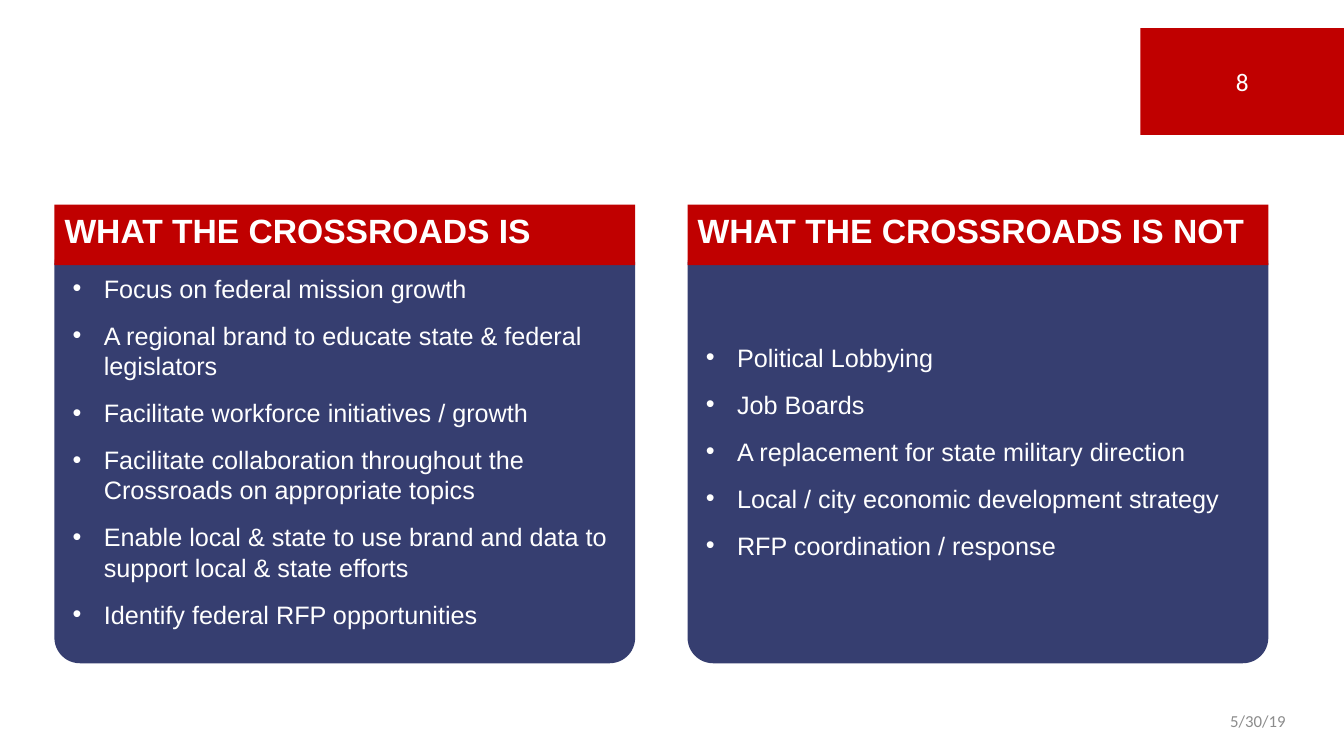
import pptx
import pptx.util
import pptx.dml.color
import pptx.enum.shapes
import pptx.enum.text
import pptx.oxml
import pptx.oxml.ns

Inches = pptx.util.Inches
RGBColor = pptx.dml.color.RGBColor
ALIGN = pptx.enum.text.PP_ALIGN
ANCHOR = pptx.enum.text.MSO_ANCHOR
SHAPE = pptx.enum.shapes.MSO_SHAPE

RED = RGBColor(0xC0, 0x00, 0x00)
NAVY = RGBColor(0x21, 0x2A, 0x61)
WHITE = RGBColor(0xFF, 0xFF, 0xFF)
GRAY = RGBColor(0x8C, 0x8C, 0x8C)

CARD_TOP, CARD_WIDTH, CARD_HEIGHT = 2.03, 5.76, 4.55
HEADING_HEIGHT, PANEL_OFFSET = 0.6, 0.34
LIST_MARGIN = 0.18

CARDS = [
    (0.54, "WHAT THE CROSSROADS IS", [
        "Focus on federal mission growth",
        "A regional brand to educate state & federal legislators",
        "Facilitate workforce initiatives / growth",
        "Facilitate collaboration throughout the Crossroads on appropriate topics",
        "Enable local & state to use brand and data to support local & state efforts",
        "Identify federal RFP opportunities",
    ]),
    (6.82, "WHAT THE CROSSROADS IS NOT", [
        "Political Lobbying",
        "Job Boards",
        "A replacement for state military direction",
        "Local / city economic development strategy",
        "RFP coordination / response",
    ]),
]


def place(box, left, top, width, height):
    """Move and size a box, in inches."""
    box.left, box.top = Inches(left), Inches(top)
    box.width, box.height = Inches(width), Inches(height)


def add_bullet(para):
    """Give a paragraph a round bullet and a hanging indent."""
    properties = para._p.get_or_add_pPr()
    properties.set("marL", str(Inches(0.31)))
    properties.set("indent", str(-Inches(0.31)))
    bullet = pptx.oxml.parse_xml(
        f'<a:buChar {pptx.oxml.ns.nsdecls("a")} char="•"/>')
    properties.append(bullet)


def write_text(box, lines, size, font="Arial", color=WHITE, bold=False,
               align=ALIGN.LEFT, anchor=ANCHOR.MIDDLE, bullets=False, after=0):
    """Fill a box with one formatted paragraph per line."""
    frame = box.text_frame
    frame.word_wrap = True
    frame.auto_size = pptx.enum.text.MSO_AUTO_SIZE.NONE
    frame.vertical_anchor = anchor
    for index, line in enumerate(lines):
        para = frame.add_paragraph() if index else frame.paragraphs[0]
        if bullets:
            add_bullet(para)
        para.alignment = align
        para.space_before = pptx.util.Pt(0)
        para.space_after = pptx.util.Pt(after)
        span = para.add_run()
        span.text = line
        span.font.name = font
        span.font.size = pptx.util.Pt(size)
        span.font.bold = bold
        span.font.color.rgb = color


def add_block(page, kind, color, left, top, width, height):
    """Add a filled shape without outline or shadow."""
    block = page.shapes.add_shape(kind, Inches(left), Inches(top),
                                  Inches(width), Inches(height))
    block.shadow.inherit = False
    block.fill.solid()
    block.fill.fore_color.rgb = color
    block.line.fill.background()
    return block


def add_card(page, heading, listing, title, items, left, top, width, height):
    """Build a red heading over a rounded panel with a bulleted list."""
    panel_box = (left, top + PANEL_OFFSET, width, height - PANEL_OFFSET)
    panel = add_block(page, SHAPE.ROUNDED_RECTANGLE, NAVY, *panel_box)
    panel.adjustments[0] = 0.06
    color = panel.fill._xPr.find(".//" + pptx.oxml.ns.qn("a:srgbClr"))
    color.append(pptx.oxml.parse_xml(
        f'<a:alpha {pptx.oxml.ns.nsdecls("a")} val="90000"/>'))
    heading.element.addprevious(panel.element)

    place(heading, left, top, width, HEADING_HEIGHT)
    heading.fill.solid()
    heading.fill.fore_color.rgb = RED
    write_text(heading, [title], 24, bold=True, anchor=ANCHOR.TOP)

    place(listing, *panel_box)
    listing.text_frame.margin_left = Inches(LIST_MARGIN)
    listing.text_frame.margin_right = Inches(LIST_MARGIN)
    write_text(listing, items, 18, bullets=True, after=12)


def add_page_number(page, number, left, top, width, height):
    """Add the red block that holds the page number."""
    block = add_block(page, SHAPE.RECTANGLE, RED, left, top, width, height)
    write_text(block, [number], 18, font="Calibri", align=ALIGN.CENTER)


def add_date(page, date, left, top, width, height):
    """Add the date at the foot of the page."""
    box = page.shapes.add_textbox(Inches(left), Inches(top),
                                  Inches(width), Inches(height))
    write_text(box, [date], 12, font="Calibri", color=GRAY, align=ALIGN.RIGHT)


def add_comparison_page(deck):
    """Build the page that sets two cards side by side."""
    page = deck.slides.add_slide(deck.slide_layouts.get_by_name("Comparison"))
    title = page.shapes.title
    title.element.getparent().remove(title.element)
    add_page_number(page, "8", 11.31, 0.28, 2.02, 1.06)
    add_date(page, "5/30/19", 9.42, 6.95, 3.43, 0.4)
    boxes = list(page.placeholders)
    for index, (left, heading, items) in enumerate(CARDS):
        add_card(page, boxes[2 * index], boxes[2 * index + 1], heading, items,
                 left, CARD_TOP, CARD_WIDTH, CARD_HEIGHT)


def main():
    """Create the deck and save it."""
    deck = pptx.Presentation()
    deck.slide_width, deck.slide_height = Inches(13.33), Inches(7.5)
    add_comparison_page(deck)
    deck.save("out.pptx")


if __name__ == "__main__":
    main()
